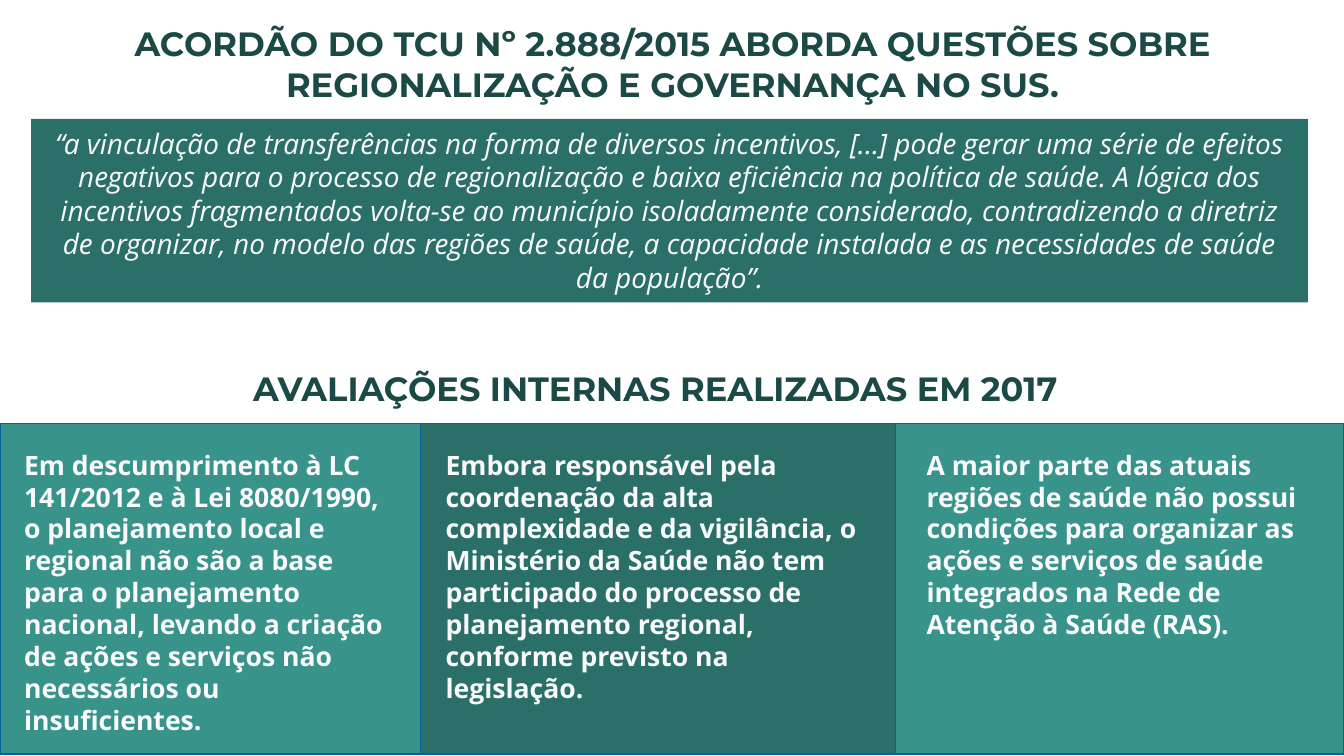
import pptx
import pptx.util
import pptx.dml.color
import pptx.enum.shapes
import pptx.enum.text

Inches = pptx.util.Inches
Pt = pptx.util.Pt
Align = pptx.enum.text.PP_ALIGN
Fit = pptx.enum.text.MSO_AUTO_SIZE

WIDE, HIGH = 13.33, 7.5
HEX = {
    "light": "38948B",
    "dark": "2A7069",
    "edge": "01659B",
    "head": "1B4945",
    "pale": "F9F9F9",
}
PANELS = [
    (0, 4.17, "light", 0.11, 3.9, 3.01,
     "Em descumprimento à LC 141/2012 e à Lei 8080/1990, o planejamento local e "
     "regional não são a base para o planejamento nacional, levando a criação de "
     "ações e serviços não necessários ou insuficientes."),
    (4.17, 4.71, "dark", 0.12, 4.43, 2.69,
     "Embora responsável pela coordenação da alta complexidade e da vigilância, o "
     "Ministério da Saúde não tem participado do processo de planejamento regional, "
     "conforme previsto na legislação."),
    (8.88, 4.45, "light", 0.18, 4.09, 2.05,
     "A maior parte das atuais regiões de saúde não possui condições para organizar as "
     "ações e serviços de saúde integrados na Rede de Atenção à Saúde (RAS)."),
]
QUOTE = (
    "“a vinculação de transferências na forma de diversos incentivos, [...] pode gerar "
    "uma série de efeitos negativos para o processo de regionalização e baixa eficiência "
    "na política de saúde. A lógica dos incentivos fragmentados volta-se ao município "
    "isoladamente considerado, contradizendo a diretriz de organizar, no modelo das "
    "regiões de saúde, a capacidade instalada e as necessidades de saúde da população”."
)


def tint(key):
    return pptx.dml.color.RGBColor.from_string(HEX[key])


def block(slide, box, fill, edge=None):
    shape = slide.shapes.add_shape(
        pptx.enum.shapes.MSO_SHAPE.RECTANGLE, *map(Inches, box))
    shape.shadow.inherit = False
    shape.fill.solid()
    shape.fill.fore_color.rgb = tint(fill)
    if edge:
        shape.line.color.rgb = tint(edge)
        shape.line.width = Pt(1)
    else:
        shape.line.fill.background()
    return shape


def write(shape, text, size, font, color, align, grow=False, bold=False, slant=False):
    frame = shape.text_frame
    frame.word_wrap = True
    frame.auto_size = Fit.SHAPE_TO_FIT_TEXT if grow else Fit.NONE
    frame.vertical_anchor = pptx.enum.text.MSO_ANCHOR.TOP
    frame.margin_left = frame.margin_right = Inches(0.13)
    frame.margin_top = frame.margin_bottom = Inches(0.07)
    para = frame.paragraphs[0]
    para.alignment = align
    run = para.add_run()
    run.text = text
    run.font.size = Pt(size)
    run.font.name = font
    run.font.bold = bold
    run.font.italic = slant
    run.font.color.rgb = tint(color)
    return para


def title(slide, box, text):
    shape = slide.shapes.add_textbox(*map(Inches, box))
    write(shape, text, 24, "Montserrat", "head", Align.CENTER, bold=True)


def quote(slide, box, text):
    shape = block(slide, box, "dark")
    para = write(shape, text, 20, "Open Sans", "pale", Align.CENTER, grow=True, slant=True)
    para.space_before = Pt(16)


def panel(slide, box, fill, inset, width, height, text):
    left, top = box[:2]
    block(slide, box, fill, "edge")
    shape = slide.shapes.add_textbox(
        *map(Inches, (left + inset, top + 0.18, width, height)))
    write(shape, text, 19, "Open Sans", "pale", Align.LEFT, grow=True, bold=True)


def main():
    deck = pptx.Presentation()
    deck.slide_width, deck.slide_height = Inches(WIDE), Inches(HIGH)
    slide = deck.slides.add_slide(deck.slide_layouts[6])
    for left, wide, fill, inset, width, height, text in reversed(PANELS):
        panel(slide, (left, HIGH * 0.56, wide, 3.28), fill, inset, width, height, text)
    quote(slide, (0.31, 1.18, WIDE * 0.95, 1.82), QUOTE)
    title(slide, (0.37, 0.16, 12.6, 1.26),
          "ACORDÃO DO TCU Nº 2.888/2015 ABORDA QUESTÕES SOBRE "
          "REGIONALIZAÇÃO E GOVERNANÇA NO SUS.")
    title(slide, (0.2, 3.58, 12.6, 0.64), "AVALIAÇÕES INTERNAS REALIZADAS EM 2017")
    deck.save("out.pptx")


if __name__ == "__main__":
    main()
